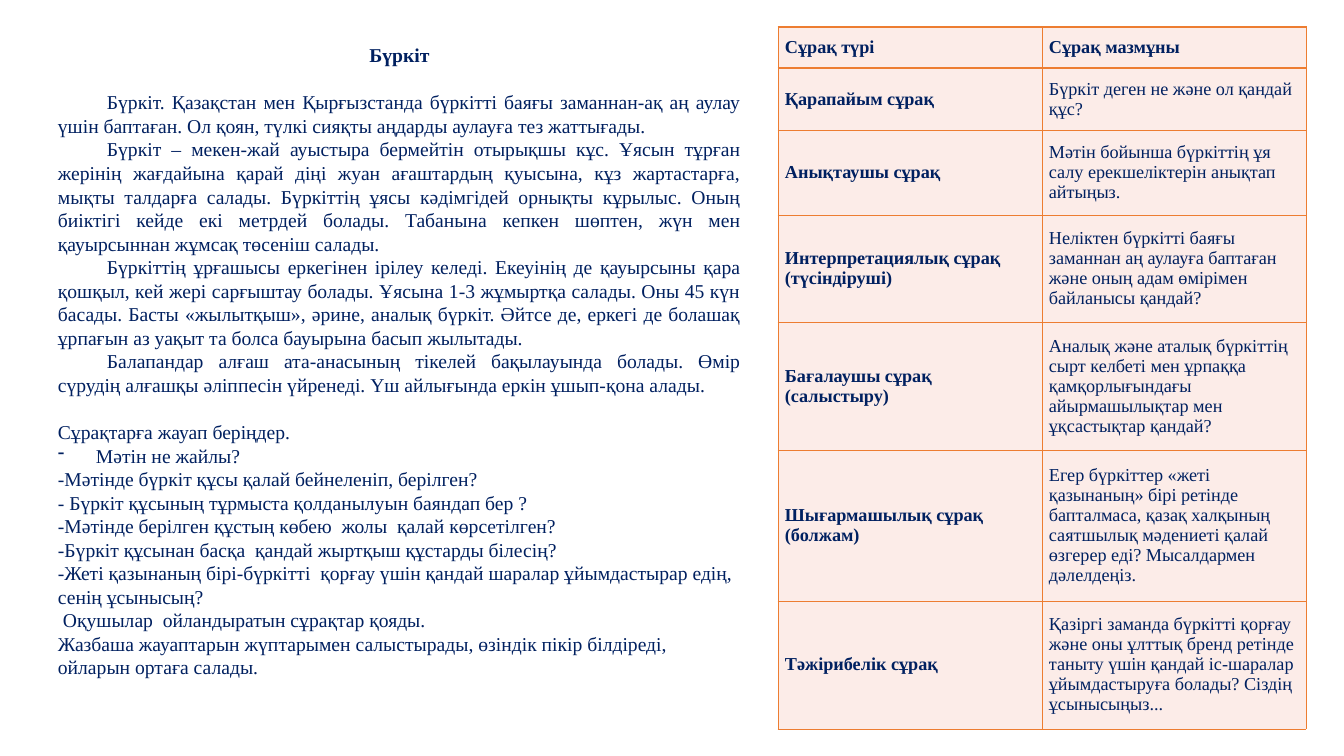
from dataclasses import dataclass

from lxml import etree
from pptx import Presentation
from pptx.dml.color import RGBColor
from pptx.enum.text import MSO_ANCHOR, MSO_AUTO_SIZE, PP_ALIGN
from pptx.oxml.ns import qn
from pptx.util import Pt

LEFT, CENTER, JUSTIFY = PP_ALIGN.LEFT, PP_ALIGN.CENTER, PP_ALIGN.JUSTIFY
MIDDLE = MSO_ANCHOR.MIDDLE
NO_AUTOFIT = MSO_AUTO_SIZE.NONE

HEADING = "Бүркіт"
STORY = [
    "Бүркіт. Қазақстан мен Қырғызстанда бүркітті баяғы заманнан-ақ аң аулау үшін баптаған. Ол қоян, түлкі сияқты аңдарды аулауға тез жаттығады.",
    "Бүркіт – мекен-жай ауыстыра бермейтін отырықшы кұс. Ұясын тұрған жерінің жағдайына қарай діңі жуан ағаштардың қуысына, кұз жартастарға, мықты талдарға салады. Бүркіттің ұясы кәдімгідей орнықты кұрылыс. Оның биіктігі кейде екі метрдей болады. Табанына кепкен шөптен, жүн мен қауырсыннан жұмсақ төсеніш салады.",
    "Бүркіттің ұрғашысы еркегінен ірілеу келеді. Екеуінің де қауырсыны қара қошқыл, кей жері сарғыштау болады. Ұясына 1-3 жұмыртқа салады. Оны 45 күн басады. Басты «жылытқыш», әрине, аналық бүркіт. Әйтсе де, еркегі де болашақ ұрпағын аз уақыт та болса бауырына басып жылытады.",
    "Балапандар алғаш ата-анасының тікелей бақылауында болады. Өмір сүрудің алғашқы әліппесін үйренеді. Үш айлығында еркін ұшып-қона алады.",
]
PROMPT = "Сұрақтарға жауап беріңдер."
FIRST_QUESTION = "Мәтін не жайлы?"
QUESTIONS = [
    "-Мәтінде бүркіт құсы қалай бейнеленіп, берілген?",
    "- Бүркіт құсының тұрмыста қолданылуын баяндап бер ?",
    "-Мәтінде берілген құстың көбею  жолы  қалай көрсетілген?",
    "-Бүркіт құсынан басқа  қандай жыртқыш құстарды білесің?",
    "-Жеті қазынаның бірі-бүркітті  қорғау үшін қандай шаралар ұйымдастырар едің, сенің ұсынысың?",
]
PUPILS = "Оқушылар  ойландыратын сұрақтар қояды."
CLOSING = "Жазбаша жауаптарын жүптарымен салыстырады, өзіндік пікір білдіреді, ойларын ортаға салады."

QUESTION_TYPES = [
    (41, "Сұрақ түрі", "Сұрақ мазмұны"),
    (62, "Қарапайым сұрақ", "Бүркіт деген не және ол қандай құс?"),
    (85, "Анықтаушы сұрақ", "Мәтін бойынша бүркіттің ұя салу ерекшеліктерін анықтап айтыңыз."),
    (107, "Интерпретациялық сұрақ (түсіндіруші)", "Неліктен бүркітті баяғы заманнан аң аулауға баптаған және оның адам өмірімен байланысы қандай?"),
    (128, "Бағалаушы сұрақ (салыстыру)", "Аналық және аталық бүркіттің сырт келбеті мен ұрпаққа қамқорлығындағы айырмашылықтар мен ұқсастықтар қандай?"),
    (151, "Шығармашылық сұрақ (болжам)", "Егер бүркіттер «жеті қазынаның» бірі ретінде бапталмаса, қазақ халқының саятшылық мәдениеті қалай өзгерер еді? Мысалдармен дәлелдеңіз."),
    (128, "Тәжірибелік сұрақ", "Қазіргі заманда бүркітті қорғау және оны ұлттық бренд ретінде таныту үшін қандай іс-шаралар ұйымдастыруға болады? Сіздің ұсынысыңыз..."),
]


@dataclass(frozen=True)
class Theme:
    font: str = "Times New Roman"
    ink: str = "002060"
    cell: str = "FCECE8"
    border: str = "ED7D31"
    header_border: float = 1
    body_border: float = 0.5
    story_size: int = 14
    table_size: int = 13
    gap: int = 17


THEME = Theme()
SLIDE_SIZE = (1344, 756)
STORY_BOX = (48, 38, 703, 651)
TABLE_ORIGIN = (778, 27)
COLUMN_WIDTH = 264
CELL_MARGINS = {"margin_left": 7, "margin_top": 10, "margin_right": 7, "margin_bottom": 10}


def px(length):
    return round(length * 914400 / 100.8)


def set_all(target, values):
    for name, value in values.items():
        setattr(target, name, value)


def write(paragraph, text, size, bold=False, align=LEFT, before=0, margin=0, indent=0, bullet=None):
    set_all(paragraph, {"alignment": align, "line_spacing": 1.0, "space_before": Pt(before)})
    properties = paragraph._p.get_or_add_pPr()
    properties.set("marL", str(px(margin)))
    properties.set("indent", str(px(indent)))
    if bullet:
        etree.SubElement(properties, qn("a:buChar")).set("char", bullet)
    run = paragraph.add_run()
    run.text = text
    set_all(run.font, {"name": THEME.font, "size": Pt(size), "bold": bold})
    run.font.color.rgb = RGBColor.from_string(THEME.ink)


def add_story(slide):
    lines = [(HEADING, {"bold": True, "align": CENTER})]
    lines += [
        (text, {"align": JUSTIFY, "indent": 49, "before": 0 if number else THEME.gap})
        for number, text in enumerate(STORY)
    ]
    lines += [
        (PROMPT, {"before": THEME.gap}),
        (FIRST_QUESTION, {"margin": 38, "indent": -38, "bullet": "-"}),
    ]
    lines += [(text, {}) for text in QUESTIONS]
    lines += [(PUPILS, {"indent": 5}), (CLOSING, {})]

    frame = slide.shapes.add_textbox(*map(px, STORY_BOX)).text_frame
    set_all(frame, {"word_wrap": True, "auto_size": NO_AUTOFIT})
    for number, (text, layout) in enumerate(lines):
        paragraph = frame.add_paragraph() if number else frame.paragraphs[0]
        write(paragraph, text, THEME.story_size, **layout)


def add_borders(cell, row_number):
    widths = {
        "a:lnL": THEME.body_border,
        "a:lnR": THEME.body_border,
        "a:lnT": THEME.header_border if row_number < 2 else THEME.body_border,
        "a:lnB": THEME.header_border if row_number == 0 else THEME.body_border,
    }
    properties = cell._tc.get_or_add_tcPr()
    for side, width in widths.items():
        line = etree.SubElement(properties, qn(side))
        line.set("w", str(Pt(width)))
        fill = etree.SubElement(line, qn("a:solidFill"))
        etree.SubElement(fill, qn("a:srgbClr")).set("val", THEME.border)


def add_question_table(slide):
    height = sum(row[0] for row in QUESTION_TYPES)
    box = (*TABLE_ORIGIN, 2 * COLUMN_WIDTH, height)
    table = slide.shapes.add_table(len(QUESTION_TYPES), 2, *map(px, box)).table
    set_all(table, {"first_row": False, "horz_banding": False})
    for column in table.columns:
        column.width = px(COLUMN_WIDTH)
    for row_number, (row_height, *texts) in enumerate(QUESTION_TYPES):
        table.rows[row_number].height = px(row_height)
        for column_number, text in enumerate(texts):
            cell = table.cell(row_number, column_number)
            set_all(cell, {name: px(value) for name, value in CELL_MARGINS.items()})
            cell.vertical_anchor = MIDDLE
            add_borders(cell, row_number)
            cell.fill.solid()
            cell.fill.fore_color.rgb = RGBColor.from_string(THEME.cell)
            bold = row_number == 0 or column_number == 0
            write(cell.text_frame.paragraphs[0], text, THEME.table_size, bold)


def main():
    presentation = Presentation()
    presentation.slide_width, presentation.slide_height = map(px, SLIDE_SIZE)
    slide = presentation.slides.add_slide(presentation.slide_layouts[6])
    add_story(slide)
    add_question_table(slide)
    presentation.save("out.pptx")


if __name__ == "__main__":
    main()
